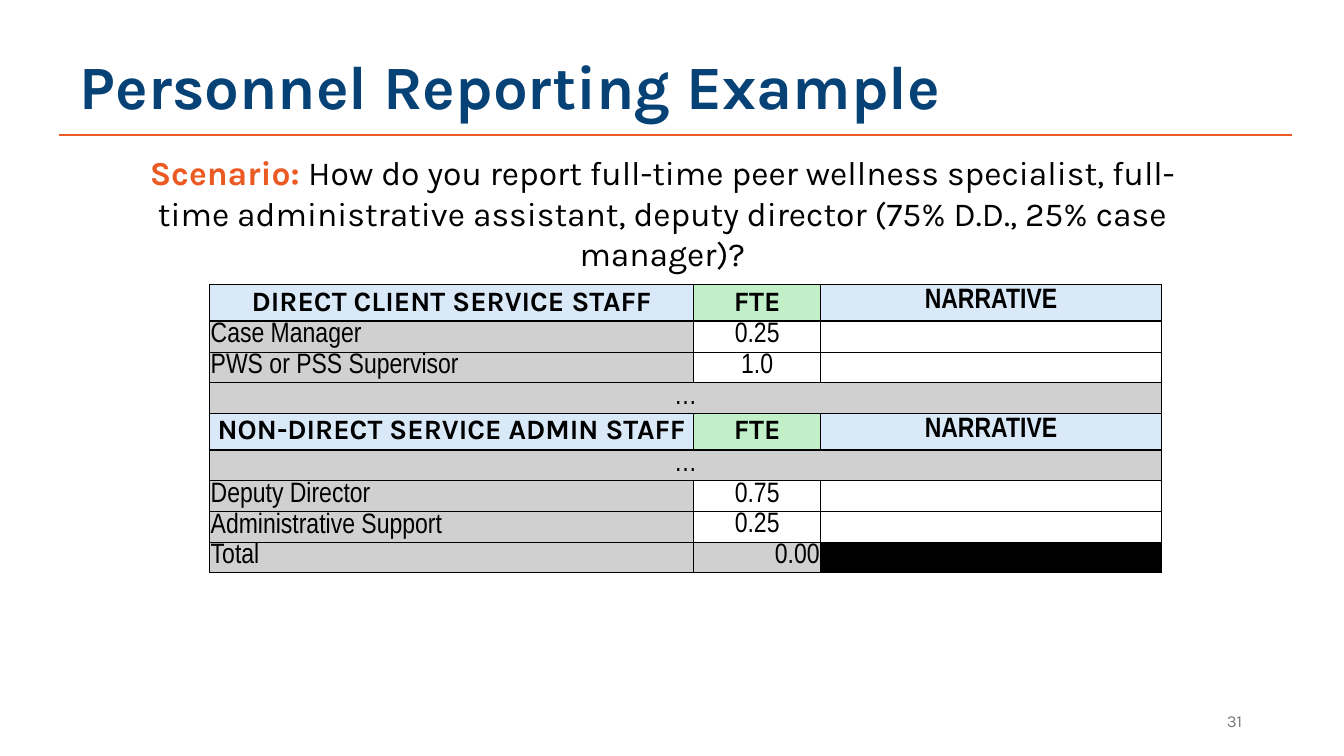
from dataclasses import dataclass

from pptx import Presentation
from pptx.dml.color import RGBColor
from pptx.enum import shapes, text
from pptx.oxml import parse_xml
from pptx.oxml.ns import nsdecls
from pptx.util import Inches, Pt


@dataclass(frozen=True)
class Theme:
    navy: str = "064276"
    orange: str = "EC5A24"
    black: str = "000000"
    white: str = "FFFFFF"
    muted: str = "797979"
    blue: str = "DAE9F8"
    green: str = "C1F0C8"
    gray: str = "D0D0D0"
    heading: str = "Karla"
    narrow: str = "Arial Narrow"
    title: int = 44
    scenario: int = 24
    cell: int = 20
    number: int = 12


T = Theme()
LEFT, CENTER, RIGHT = text.PP_ALIGN.LEFT, text.PP_ALIGN.CENTER, text.PP_ALIGN.RIGHT
MIDDLE, BOTTOM = text.MSO_ANCHOR.MIDDLE, text.MSO_ANCHOR.BOTTOM


def add_run(p, words, size, color, name=T.heading, bold=False):
    r = p.add_run()
    r.text = words
    for key, value in {"size": Pt(size), "name": name, "bold": bold}.items():
        setattr(r.font, key, value)
    r.font.color.rgb = RGBColor.from_string(color)


def add_borders(cell, widths):
    """Draw black cell borders; widths maps the sides L, R, T, B to points."""
    tc_pr = cell._tc.get_or_add_tcPr()
    for side, width in widths.items():
        tc_pr.append(parse_xml(
            f'<a:ln{side} {nsdecls("a")} w="{Pt(width)}"><a:solidFill>'
            f'<a:srgbClr val="{T.black}"/></a:solidFill></a:ln{side}>'))


prs = Presentation()
prs.slide_width, prs.slide_height = Inches(13.33), Inches(7.5)
s = prs.slides.add_slide(prs.slide_layouts[5])

# Title and rule
rule = s.shapes.add_connector(shapes.MSO_CONNECTOR.STRAIGHT,
                              Inches(0.59), Inches(1.34), Inches(12.81), Inches(1.34))
rule.line.color.rgb = RGBColor.from_string(T.orange)
rule.line.width = Pt(1)
rule._element.spPr.append(parse_xml(f'<a:effectLst {nsdecls("a")}/>'))

title = s.shapes.title
scenario = s.shapes.add_textbox(0, 0, 0, 0)
number = s.shapes.add_textbox(0, 0, 0, 0)
blocks = [
    (title, (0.69, 0.44, 10.94, 0.9), LEFT, MIDDLE,
     [("Personnel Reporting Example", T.title, T.navy, T.heading, True)]),
    (scenario, (1.1, 1.46, 10.94, 0.91), CENTER, text.MSO_ANCHOR.TOP,
     [("Scenario: ", T.scenario, T.orange, T.heading, True),
      ("How do you report full-time peer wellness specialist, full-time administrative "
       "assistant, deputy director (75% D.D., 25% case manager)?", T.scenario, T.black)]),
    (number, (9.42, 6.95, 3, 0.4), RIGHT, MIDDLE, [("31", T.number, T.muted)]),
]
for sp, box, align, anchor, runs in blocks:
    for key, value in zip(("left", "top", "width", "height"), box):
        setattr(sp, key, Inches(value))
    tf = sp.text_frame
    tf.auto_size = text.MSO_AUTO_SIZE.NONE
    tf.word_wrap = True
    tf.vertical_anchor = anchor
    p = tf.paragraphs[0]
    p.alignment = align
    for run in runs:
        add_run(p, *run)
title.text_frame.paragraphs[0].line_spacing = 0.9

# Staffing table
rows = [
    ("DIRECT CLIENT SERVICE STAFF", "FTE", "NARRATIVE"),
    ("Case Manager", "0.25", ""),
    ("PWS or PSS Supervisor", "1.0", ""),
    ("…", "", ""),
    ("NON-DIRECT SERVICE ADMIN STAFF", "FTE", "NARRATIVE"),
    ("…", "", ""),
    ("Deputy Director", "0.75", ""),
    ("Administrative Support", "0.25", ""),
    ("Total", "0.00", ""),
]
headers = (0, 4)
last = len(rows) - 1
table = s.shapes.add_table(len(rows), 3, Inches(2.08), Inches(2.82),
                           Inches(9.44), Inches(2.82)).table
table.first_row = table.horz_banding = False
for column, width in zip(table.columns, (4.8, 1.26, 3.38)):
    column.width = Inches(width)

for i, row in enumerate(rows):
    header, gap, total = i in headers, row[0] == "…", i == last
    table.rows[i].height = Inches(0.36 if header else 0.3)
    if header:
        fills = (T.blue, T.green, T.blue)
    elif gap:
        fills = (T.gray,) * 3
    elif total:
        fills = (T.gray, T.gray, T.black)
    else:
        fills = (T.gray, T.white, T.white)
    for j, words in enumerate(row):
        cell = table.cell(i, j)
        margin = 0.01 if words else 0
        for key, value in {"left": margin, "right": margin, "top": margin,
                           "bottom": 3 * margin}.items():
            setattr(cell, f"margin_{key}", Inches(value))
        add_borders(cell, {
            "L": 1 if header or j == 0 else 0.5,
            "R": 1 if header or (j == 2 and i < headers[1]) else 0.5,
            "T": 1 if header or i - 1 in headers else 0.5,
            "B": 1 if header or total else 0.5,
        })
        cell.fill.solid()
        cell.fill.fore_color.rgb = RGBColor.from_string(fills[j])
        if words:
            cell.vertical_anchor = MIDDLE if header or (j == 1 and not total) else BOTTOM
            p = cell.text_frame.paragraphs[0]
            if header or gap or j:
                p.alignment = RIGHT if total else CENTER
            add_run(p, words, T.cell, T.black,
                    T.heading if header and j < 2 else T.narrow, header)
    if gap:
        table.cell(i, 0).merge(table.cell(i, 2))

prs.save("out.pptx")
